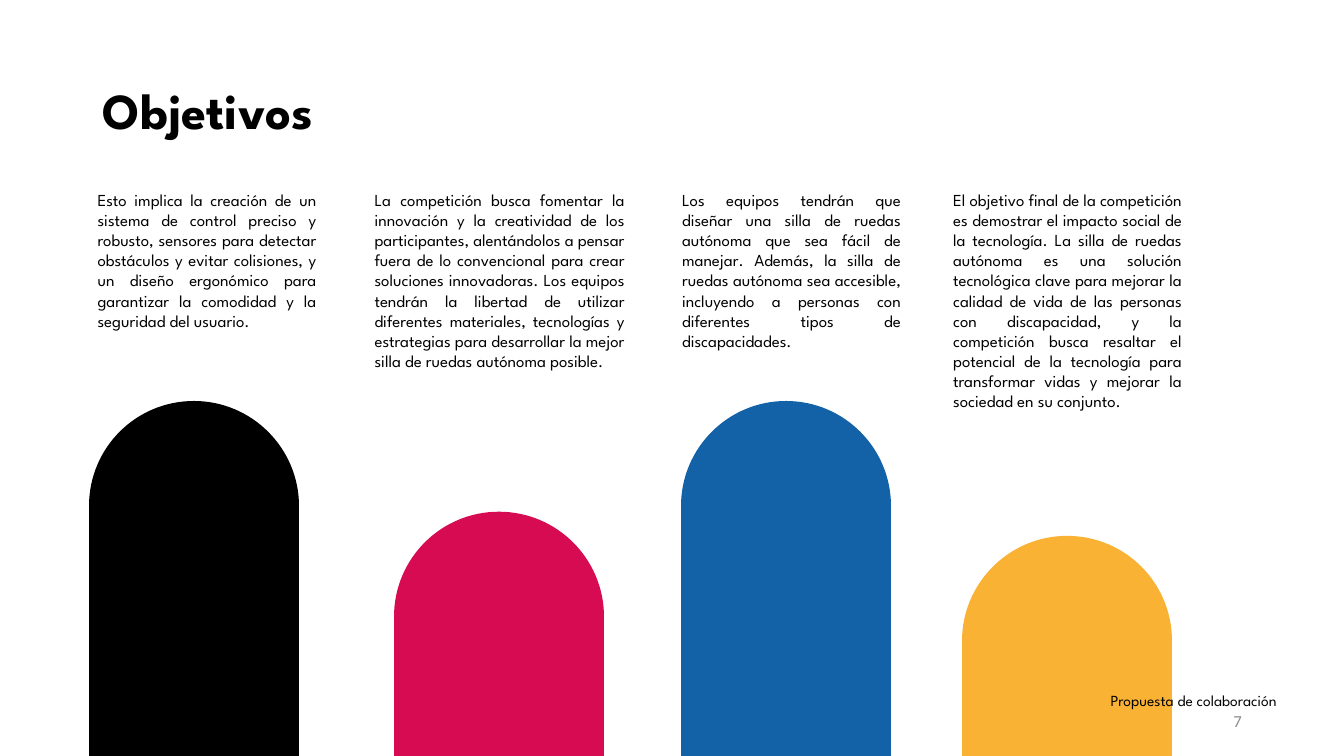
import pptx
import pptx.dml.color
import pptx.enum.shapes
import pptx.enum.text
import pptx.oxml
import pptx.util
from pptx.oxml.ns import qn

Cm = pptx.util.Cm
Pt = pptx.util.Pt
ALIGN = pptx.enum.text.PP_ALIGN
ANCHOR = pptx.enum.text.MSO_ANCHOR

# text, text left, text width, text height, bar centre, bar top, bar bottom, colour
OBJECTIVES = [
    ("Esto implica la creación de un sistema de control preciso y robusto, "
     "sensores para detectar obstáculos y evitar colisiones, y un diseño "
     "ergonómico para garantizar la comodidad y la seguridad del usuario.",
     2.21, 6.02, 4.37, 4.88, 12.75, 22.05, "000000"),
    ("La competición busca fomentar la innovación y la creatividad de los "
     "participantes, alentándolos a pensar fuera de lo convencional para crear "
     "soluciones innovadoras. Los equipos tendrán la libertad de utilizar "
     "diferentes materiales, tecnologías y estrategias para desarrollar la "
     "mejor silla de ruedas autónoma posible.",
     9.19, 6.81, 6.4, 12.57, 15.54, 24.84, "D60B52"),
    ("Los equipos tendrán que diseñar una silla de ruedas autónoma que sea "
     "fácil de manejar. Además, la silla de ruedas autónoma sea accesible, "
     "incluyendo a personas con diferentes tipos de discapacidades.",
     16.94, 6.02, 4.37, 19.81, 12.75, 24.08, "1362A8"),
    ("El objetivo final de la competición es demostrar el impacto social de la "
     "tecnología. La silla de ruedas autónoma es una solución tecnológica clave "
     "para mejorar la calidad de vida de las personas con discapacidad, y la "
     "competición busca resaltar el potencial de la tecnología para transformar "
     "vidas y mejorar la sociedad en su conjunto.",
     23.77, 6.27, 7.44, 26.9, 16.15, 25.45, "F9B233"),
]


def colour(value):
    return pptx.dml.color.RGBColor.from_string(value)


class ObjectivesSlide:
    font = "League Spartan"
    text_colour = "000000"
    text_top = 4.65
    bar_width = 150

    def __init__(self, deck):
        self.slide = deck.slides.add_slide(deck.slide_layouts[6])

    def text(self, words, left, top, width, height, size=12, bold=False,
             font=None, fill=None, align=ALIGN.LEFT, anchor=ANCHOR.TOP,
             spacing=1.0):
        box = self.slide.shapes.add_textbox(Cm(left), Cm(top), Cm(width), Cm(height))
        frame = box.text_frame
        frame.word_wrap = True
        frame.vertical_anchor = anchor
        paragraph = frame.paragraphs[0]
        paragraph.alignment = align
        paragraph.line_spacing = spacing
        run = paragraph.add_run()
        run.text = words
        run.font.name = font or self.font
        run.font.size = Pt(size)
        run.font.bold = bold
        run.font.color.rgb = colour(fill or self.text_colour)

    def bar(self, centre, top, bottom, fill):
        """Draw a thick vertical line with round ends."""
        line = self.slide.shapes.add_connector(
            pptx.enum.shapes.MSO_CONNECTOR.STRAIGHT,
            Cm(centre), Cm(top), Cm(centre), Cm(bottom))
        line.line.width = Pt(self.bar_width)
        line.line.color.rgb = colour(fill)
        properties = line._element.spPr
        properties.find(qn("a:ln")).set("cap", "rnd")
        properties.append(pptx.oxml.parse_xml(
            '<a:effectLst xmlns:a="http://schemas.openxmlformats.org/drawingml/2006/main"/>'))

    def objective(self, words, left, width, height, centre, top, bottom, fill):
        self.bar(centre, top, bottom, fill)
        self.text(words, left, self.text_top, width, height, align=ALIGN.JUSTIFY)


def main():
    deck = pptx.Presentation()
    deck.slide_width, deck.slide_height = Cm(33.87), Cm(19.05)
    page = ObjectivesSlide(deck)
    page.text("Objetivos", 2.34, 1.02, 29.21, 3.68, size=36, bold=True,
              anchor=ANCHOR.MIDDLE, spacing=0.9)
    for objective in OBJECTIVES:
        page.objective(*objective)
    page.text("Propuesta de colaboración", 27.74, 17.3, 5.77, 0.74, size=11)
    page.text("7", 23.93, 17.65, 7.62, 1.02, font="Calibri", fill="8C8C8C",
              align=ALIGN.RIGHT, anchor=ANCHOR.MIDDLE)
    deck.save("out.pptx")


if __name__ == "__main__":
    main()
